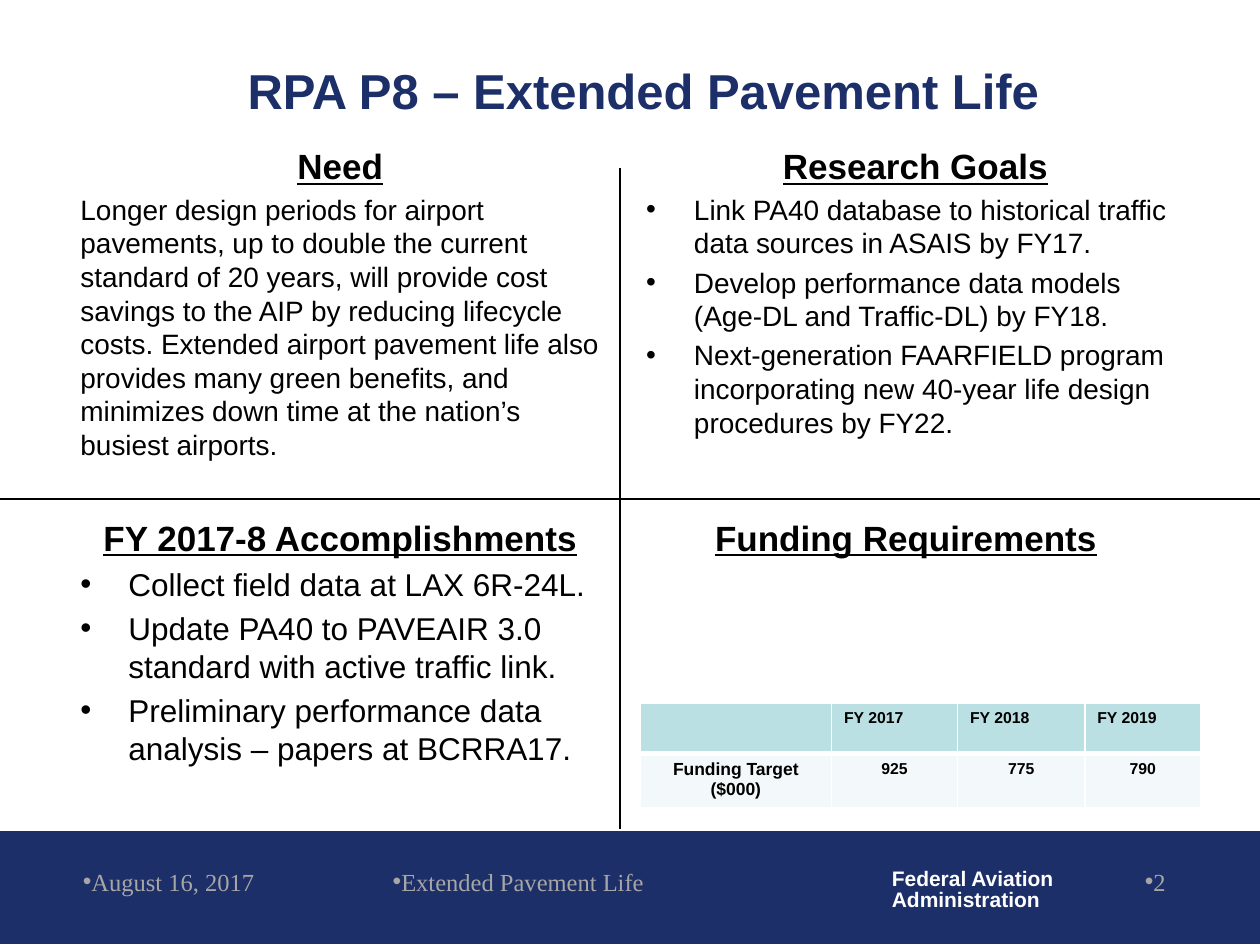
from pptx import Presentation
from pptx.dml.color import RGBColor
from pptx.enum.shapes import MSO_CONNECTOR, MSO_SHAPE
from pptx.enum.text import MSO_ANCHOR, PP_ALIGN
from pptx.oxml.ns import qn
from pptx.util import Inches, Pt
from lxml.etree import SubElement

COLORS = {"navy": "1D2F68", "white": "FFFFFF", "black": "000000",
          "gray": "A6A6A6", "header": "BBE0E3", "row": "F3F9FA"}


def rgb(name):
    return RGBColor.from_string(COLORS[name])


def style(paragraph, size, color="black", bold=False, underline=False,
          font_name="Arial", align=PP_ALIGN.LEFT):
    paragraph.alignment = align
    for run in paragraph.runs:
        font = run.font
        font.name, font.size = font_name, Pt(size)
        font.bold, font.underline = bold, underline
        font.color.rgb = rgb(color)


def add_bullet(paragraph, hanging=0):
    props = paragraph._p.get_or_add_pPr()
    props.set("marL", str(Inches(hanging)))
    props.set("indent", str(-Inches(hanging)))
    SubElement(props, qn("a:buFont")).set("typeface", "Arial")
    SubElement(props, qn("a:buChar")).set("char", "•")


def add_text_frame(slide, left, top, width, height, wrap=True):
    box = slide.shapes.add_textbox(Inches(left), Inches(top), Inches(width), Inches(height))
    box.text_frame.word_wrap = wrap
    return box.text_frame


def add_quadrant(slide, box, heading, lines=(), size=16, bulleted=True):
    frame = add_text_frame(slide, *box)
    frame.text = heading
    style(frame.paragraphs[0], 20, bold=True, underline=True, align=PP_ALIGN.CENTER)
    for line in lines:
        paragraph = frame.add_paragraph()
        paragraph.text = line
        paragraph.space_before = Pt(0.2 * size)
        if bulleted:
            add_bullet(paragraph, 0.38)
        style(paragraph, size)


def add_footer_item(slide, left, width, text, align):
    frame = add_text_frame(slide, left, 6.83, width, 0.5)
    frame.text = text
    add_bullet(frame.paragraphs[0])
    style(frame.paragraphs[0], 14, "gray", font_name="Times New Roman", align=align)


def add_divider(slide, x1, y1, x2, y2):
    divider = slide.shapes.add_connector(
        MSO_CONNECTOR.STRAIGHT, Inches(x1), Inches(y1), Inches(x2), Inches(y2))
    divider.line.color.rgb = rgb("black")
    divider.line.width = Pt(0.75)
    SubElement(divider._element.spPr, qn("a:effectLst"))


def set_borders(cell, bottom):
    props = cell._tc.get_or_add_tcPr()
    for side, width in (("L", 1), ("R", 1), ("T", 1), ("B", bottom)):
        border = SubElement(props, qn(f"a:ln{side}"), w=str(Pt(width)))
        fill = SubElement(border, qn("a:solidFill"))
        SubElement(fill, qn("a:srgbClr"), val=COLORS["white"])


def add_funding_table(slide):
    rows = [["", "FY 2017", "FY 2018", "FY 2019"],
            ["Funding Target ($000)", "925", "775", "790"]]
    table = slide.shapes.add_table(2, 4, Inches(5.08), Inches(5.58),
                                   Inches(4.45), Inches(0.83)).table
    for column, width in zip(table.columns, (1.52, 1, 1.01, 0.92)):
        column.width = Inches(width)
    for row, height in zip(table.rows, (0.4, 0.43)):
        row.height = Inches(height)
    for r, values in enumerate(rows):
        for c, value in enumerate(values):
            cell = table.cell(r, c)
            cell.text = value
            style(cell.text_frame.paragraphs[0], 9 if c else 10, bold=True,
                  align=PP_ALIGN.CENTER if r else PP_ALIGN.LEFT)
            set_borders(cell, bottom=1 if r else 3)
            cell.fill.solid()
            cell.fill.fore_color.rgb = rgb("row" if r else "header")


def add_footer(slide):
    band = slide.shapes.add_shape(MSO_SHAPE.RECTANGLE, 0, Inches(6.6), Inches(10), Inches(0.89))
    band.shadow.inherit = False
    band.fill.solid()
    band.fill.fore_color.rgb = rgb("navy")
    band.line.color.rgb = rgb("navy")
    band.line.width = Pt(0.75)

    agency = add_text_frame(slide, 6.98, 6.85, 1.5, 0.44, wrap=False)
    agency.text = "Federal Aviation\nAdministration"
    for paragraph in agency.paragraphs:
        paragraph.line_spacing = 0.85
        style(paragraph, 12, "white", bold=True)

    add_footer_item(slide, 0.56, 1.9, "August 16, 2017", PP_ALIGN.LEFT)
    add_footer_item(slide, 2.53, 3.17, "Extended Pavement Life", PP_ALIGN.CENTER)
    add_footer_item(slide, 7.27, 2.08, "2", PP_ALIGN.RIGHT)


def main():
    prs = Presentation()
    prs.slide_width, prs.slide_height = Inches(10), Inches(7.5)
    slide = prs.slides.add_slide(prs.slide_layouts[5])

    # Title
    title = slide.shapes.title
    title.left, title.top = Inches(0.47), Inches(0.38)
    title.width, title.height = Inches(9.27), Inches(0.67)
    title.text_frame.text = "RPA P8 – Extended Pavement Life"
    title.text_frame.vertical_anchor = MSO_ANCHOR.MIDDLE
    style(title.text_frame.paragraphs[0], 28, "navy", bold=True, align=PP_ALIGN.CENTER)

    add_footer(slide)

    # Four quadrants
    left, right, top, bottom = 0.54, 5.03, 1.1, 4.05
    add_quadrant(slide, (left, top, 4.32, 2.9), "Need", [
        "Longer design periods for airport pavements, up to double the current standard "
        "of 20 years, will provide cost savings to the AIP by reducing lifecycle costs. "
        "Extended airport pavement life also provides many green benefits, and minimizes "
        "down time at the nation’s busiest airports."], bulleted=False)
    add_quadrant(slide, (right, top, 4.47, 2.9), "Research Goals", [
        "Link PA40 database to historical traffic data sources in ASAIS by FY17.",
        "Develop performance data models (Age-DL and Traffic-DL) by FY18.",
        "Next-generation FAARFIELD program incorporating new 40-year life design "
        "procedures by FY22."])
    add_quadrant(slide, (left, bottom, 4.32, 2.33), "FY 2017-8 Accomplishments", [
        "Collect field data at LAX 6R-24L.",
        "Update PAVEAIR 3.0 standard with active traffic link.".replace(
            "Update ", "Update PA40 to "),
        "Preliminary performance data analysis – papers at BCRRA17."], size=18)
    add_quadrant(slide, (right, bottom, 4.32, 2.33), "Funding Requirements")

    # Dividing lines and funding table
    add_divider(slide, 4.92, 1.33, 4.92, 6.58)
    add_divider(slide, 0, 3.96, 10, 3.96)
    add_funding_table(slide)

    prs.save("out.pptx")


if __name__ == "__main__":
    main()
